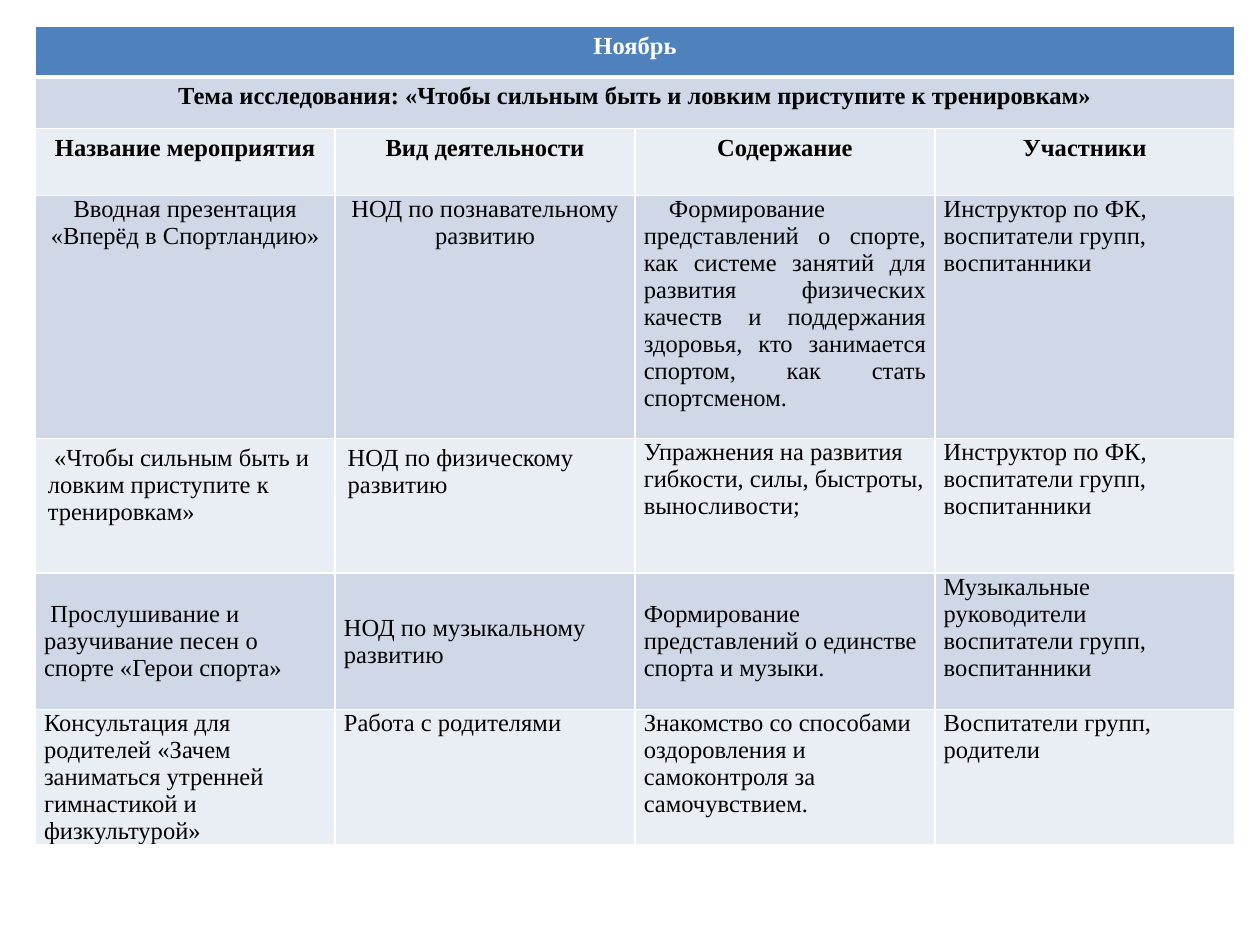
from dataclasses import dataclass
from pptx import Presentation
from pptx.dml.color import RGBColor
from pptx.enum.text import MSO_ANCHOR as Anchor, PP_ALIGN as Align
from pptx.oxml import parse_xml
from pptx.oxml.ns import nsdecls
from pptx.util import Inches, Pt

BLUE = RGBColor(0x4F, 0x81, 0xBD)
DARK = RGBColor(0xD0, 0xD8, 0xE8)
PALE = RGBColor(0xE9, 0xED, 0xF4)
WHITE = RGBColor(0xFF, 0xFF, 0xFF)
BLACK = RGBColor(0, 0, 0)
FONT = "Times New Roman"
COL = 2.38
HEIGHTS = [0.4, 0.41, 0.53, 1.93, 1.07, 1.08, 1.07]
HEADS = 3  # bold rows at the top


@dataclass
class Item:
    text: str
    align: Align = Align.LEFT
    anchor: Anchor = Anchor.TOP
    tight: bool = True  # narrow side margins, none above and below
    indent: float = 0


def head(text: str) -> Item:
    return Item(text, Align.CENTER, tight=False)


def mid(text: str, indent: float = 0) -> Item:
    return Item(text, anchor=Anchor.MIDDLE, indent=indent)


TEAM = Item("Инструктор по ФК, воспитатели групп, воспитанники")
ROWS = [
    [head("Ноябрь")],
    [head("Тема исследования: «Чтобы сильным быть и ловким приступите к тренировкам»")],
    [head("Название мероприятия"), head("Вид деятельности"),
     head("Содержание"), head("Участники")],
    [Item("Вводная презентация «Вперёд в Спортландию»", Align.CENTER),
     Item("НОД по познавательному развитию", Align.CENTER),
     Item("Формирование представлений о спорте, как системе занятий для развития "
          "физических качеств и поддержания здоровья, кто занимается спортом, "
          "как стать спортсменом.", Align.JUSTIFY, indent=0.2),
     TEAM],
    [Item("«Чтобы сильным быть и ловким приступите к тренировкам»",
          tight=False, indent=0.05),
     Item("НОД по физическому развитию", tight=False),
     Item("Упражнения на развития гибкости, силы, быстроты, выносливости;"),
     TEAM],
    [mid("Прослушивание и разучивание песен о спорте «Герои спорта»", 0.05),
     mid("НОД по музыкальному развитию"),
     mid("Формирование представлений о единстве спорта и музыки."),
     Item("Музыкальные руководители\nвоспитатели групп, воспитанники")],
    [Item("Консультация для родителей «Зачем заниматься утренней гимнастикой "
          "и физкультурой»"),
     Item("Работа с родителями"),
     Item("Знакомство со способами оздоровления и самоконтроля за самочувствием."),
     Item("Воспитатели групп, родители")],
]


def paint(cell, row: int) -> None:
    """Fill a cell and draw its white borders."""
    cell.fill.solid()
    cell.fill.fore_color.rgb = BLUE if row == 0 else (DARK if row % 2 else PALE)
    props = cell._tc.get_or_add_tcPr()
    wide = {"T": 3 if row == 1 else 1, "B": 3 if row == 0 else 1}
    for spot, side in enumerate("LRTB"):
        props.insert(spot, parse_xml(
            f'<a:ln{side} {nsdecls("a")} w="{Pt(wide.get(side, 1))}"><a:solidFill>'
            f'<a:srgbClr val="{WHITE}"/></a:solidFill></a:ln{side}>'))


def write(cell, item: Item, row: int) -> None:
    """Put an item's text into a cell and format it."""
    cell.vertical_anchor = item.anchor
    side, edge = (0.07, 0) if item.tight else (0.1, 0.05)
    cell.margin_left = cell.margin_right = Inches(side)
    cell.margin_top = cell.margin_bottom = Inches(edge)
    cell.text_frame.text = item.text
    for para in cell.text_frame.paragraphs:
        para.alignment = item.align
        if item.indent:
            para._p.get_or_add_pPr().set("indent", str(Inches(item.indent)))
        for run in para.runs:
            run.font.name = FONT
            run.font.size = Pt(14)
            run.font.bold = row < HEADS
            run.font.color.rgb = WHITE if row == 0 else BLACK


def main() -> None:
    deck = Presentation()
    deck.slide_width, deck.slide_height = Inches(10), Inches(7.5)
    slide = deck.slides.add_slide(deck.slide_layouts[6])

    # Table frame
    table = slide.shapes.add_table(
        len(ROWS), 4, Inches(0.28), Inches(0.21),
        Inches(4 * COL), Inches(sum(HEIGHTS))).table
    table.first_row = table.horz_banding = False
    for col in table.columns:
        col.width = Inches(COL)

    # Cells, with single-item rows merged across
    for r, (items, height) in enumerate(zip(ROWS, HEIGHTS)):
        table.rows[r].height = Inches(height)
        for c in range(4):
            paint(table.cell(r, c), r)
        if len(items) == 1:
            table.cell(r, 0).merge(table.cell(r, 3))
        for c, item in enumerate(items):
            write(table.cell(r, c), item, r)

    deck.save("out.pptx")


if __name__ == "__main__":
    main()
